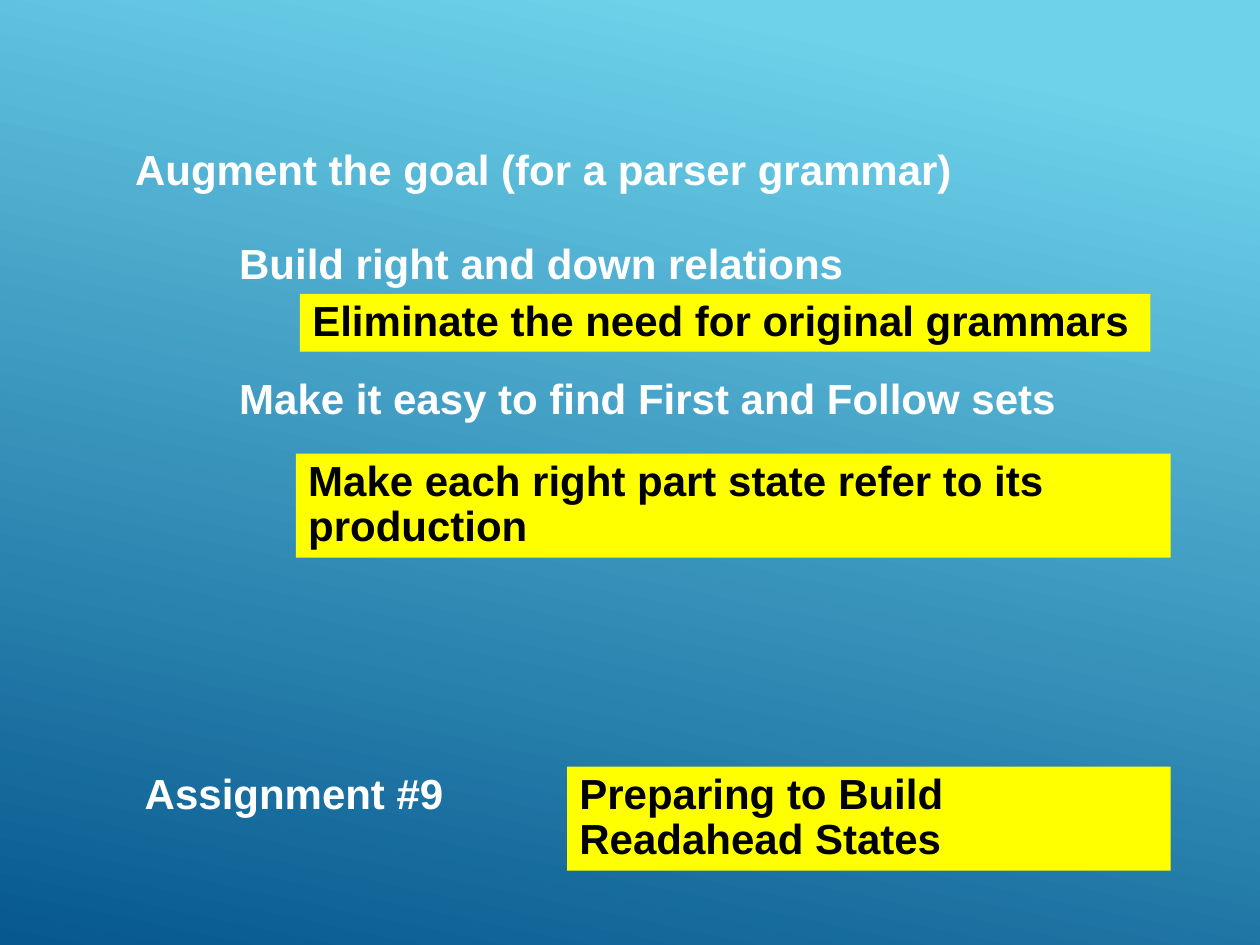
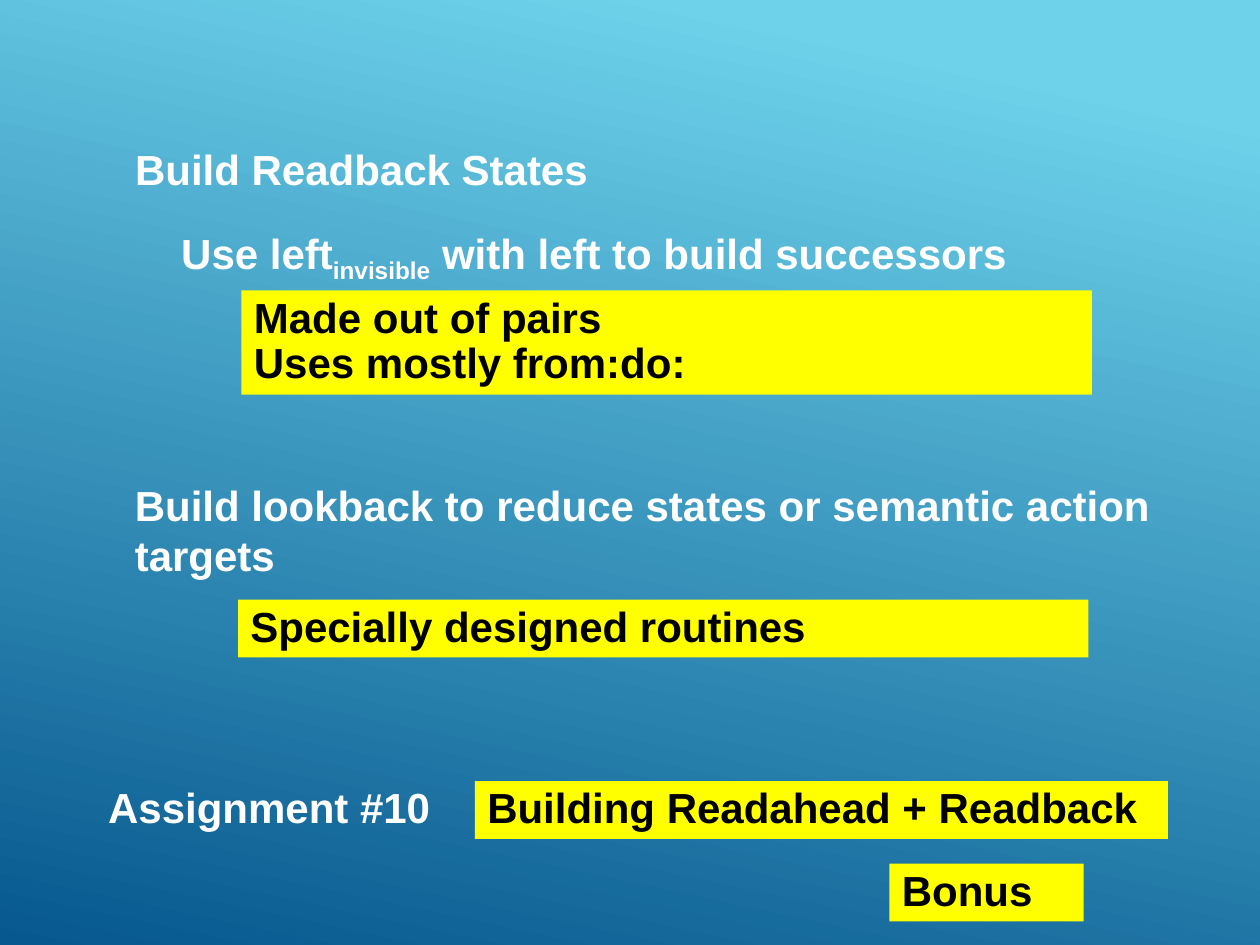
import pptx
import pptx.dml.color
import pptx.enum.shapes
import pptx.enum.text
import pptx.util

Pt = pptx.util.Pt
FONT, SIZE = "Arial", 24
WHITE, BLACK, YELLOW = "FFFFFF", "000000", "FFFF00"
SKY, DEEP_BLUE = "6ED2EB", "06588E"
LOOSE, TIGHT = 29, 25.7  # line pitch of plain and compact text
ONE_LINE, TWO_LINES = 33, 59.5  # heights of the yellow notes
TITLE_ONLY = 5


def rgb(color):
    return pptx.dml.color.RGBColor.from_string(color)


def set_background(master):
    fill = master.background.fill
    fill.gradient()
    fill.gradient_angle = 258
    stops = fill.gradient_stops
    for stop, position, color in zip(stops, (0.1, 1), (SKY, DEEP_BLUE)):
        stop.position = position
        stop.color.rgb = rgb(color)


def add_run(p, text, color, subscript=False):
    r = p.add_run()
    r.text = text
    r.font.name, r.font.size, r.font.bold = FONT, Pt(SIZE), True
    r.font.color.rgb = rgb(color)
    if subscript:
        r.font._element.set("baseline", "-25000")


def write(sp, lines, color, pitch, wrap):
    """Fill a shape; each line is a list of (text, subscript) runs."""
    tf = sp.text_frame
    tf.word_wrap = wrap
    tf.auto_size = pptx.enum.text.MSO_AUTO_SIZE.NONE
    tf.vertical_anchor = pptx.enum.text.MSO_ANCHOR.TOP
    p = tf.paragraphs[0]
    p.alignment = pptx.enum.text.PP_ALIGN.LEFT
    p.line_spacing = Pt(pitch)
    p.space_before = Pt(0)
    for i, line in enumerate(lines):
        if i:
            p.add_line_break()
        for text, subscript in line:
            add_run(p, text, color, subscript)


def add_heading(s, text, width):
    sp = s.shapes.title
    sp.left, sp.top, sp.width, sp.height = Pt(70), Pt(78), Pt(width), Pt(36)
    write(sp, [[(text, False)]], WHITE, LOOSE, False)


def add_label(s, x, y, width, *runs, pitch=LOOSE, height=36, wrap=False):
    sp = s.shapes.add_textbox(Pt(x), Pt(y), Pt(width), Pt(height))
    write(sp, [runs], WHITE, pitch, wrap)


def add_note(s, x, y, width, *lines, height=ONE_LINE):
    sp = s.shapes.add_shape(pptx.enum.shapes.MSO_SHAPE.RECTANGLE,
                            Pt(x), Pt(y), Pt(width), Pt(height))
    sp.shadow.inherit = False
    sp.fill.solid()
    sp.fill.fore_color.rgb = rgb(YELLOW)
    sp.line.fill.background()
    write(sp, [[(line, False)] for line in lines], BLACK, TIGHT, True)


def add_assignment(s, x, y, width, number):
    add_label(s, x, y, width, (f"Assignment #{number}", False),
              pitch=TIGHT, height=ONE_LINE)


def build_relations_slide(s):
    add_heading(s, "Augment the goal (for a parser grammar)", 486)
    add_label(s, 129.6, 132, 363, ("Build right and down relations", False))
    add_note(s, 171.4, 168, 486, "Eliminate the need for original grammars")
    add_label(s, 129.6, 209, 485,
              ("Make it easy to find First and Follow sets", False))
    add_note(s, 169, 259.2, 500,
             "Make each right part state refer to its production",
             height=TWO_LINES)
    add_assignment(s, 75.6, 438, 187, 9)
    add_note(s, 324, 438, 345, "Preparing to Build Readahead States",
             height=TWO_LINES)


def build_readback_slide(s):
    add_heading(s, "Build Readback States", 276)
    add_label(s, 96.5, 130, 499, ("Use left", False), ("invisible", True),
              (" with left to build successors", False))
    add_note(s, 138, 166, 486, "Made out of pairs", "Uses mostly from:do:",
             height=TWO_LINES)
    add_label(s, 70, 270, 626,
              ("Build lookback to reduce states or semantic action targets",
               False), height=65.5, wrap=True)
    add_note(s, 136, 342.7, 486, "Specially designed routines")
    add_assignment(s, 54.7, 446, 200, 10)
    add_note(s, 508.3, 493.5, 111, "Bonus")
    add_note(s, 271.4, 446.4, 396, "Building Readahead + Readback")


def main():
    prs = pptx.Presentation()
    prs.slide_width, prs.slide_height = Pt(720), Pt(540)
    set_background(prs.slide_master)
    for build in (build_relations_slide, build_readback_slide):
        build(prs.slides.add_slide(prs.slide_layouts[TITLE_ONLY]))
    prs.save("out.pptx")


if __name__ == "__main__":
    main()
